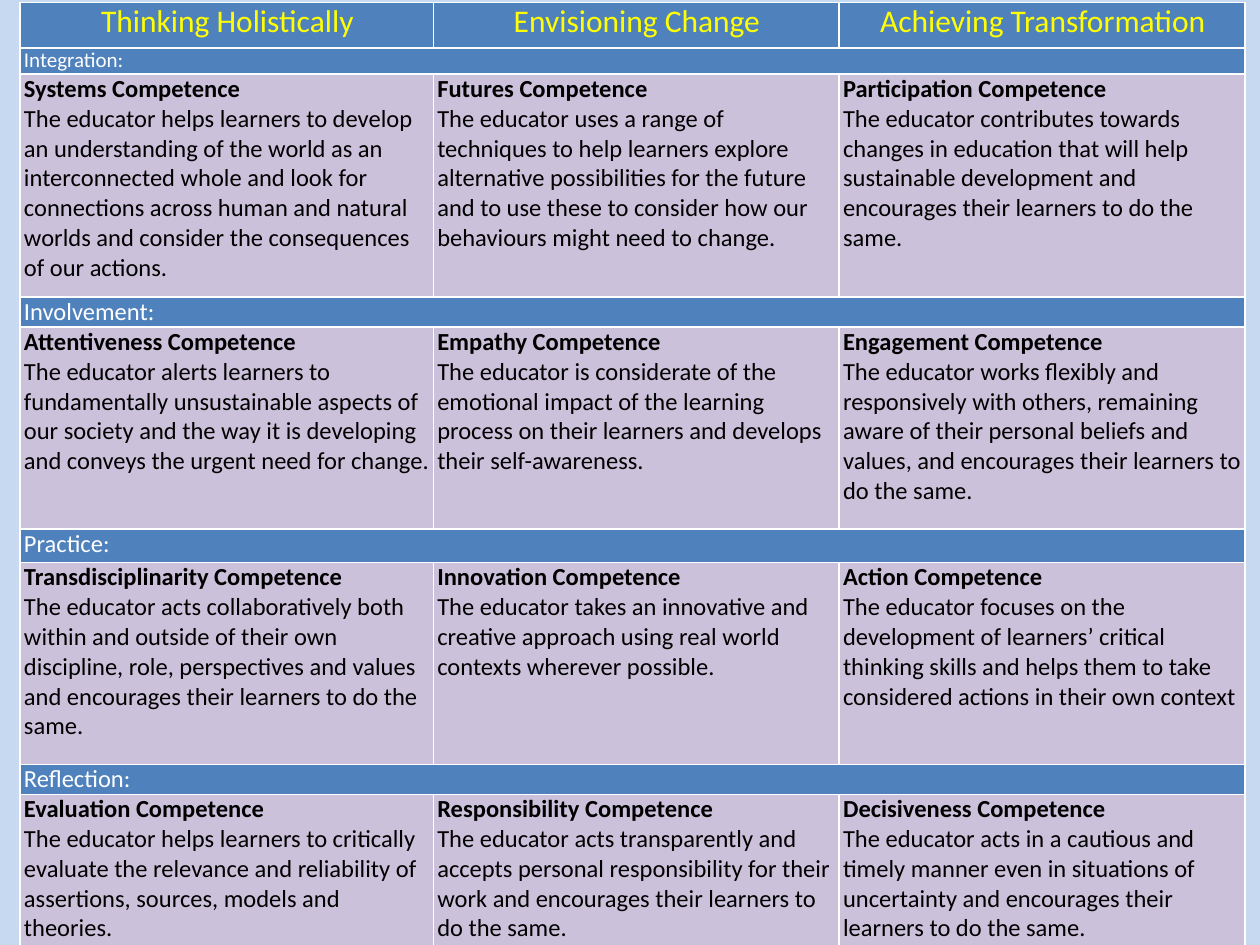
import dataclasses

import lxml.etree
import pptx
import pptx.dml.color
import pptx.enum.text
import pptx.oxml
import pptx.oxml.ns
import pptx.util

Pt = pptx.util.Pt


@dataclasses.dataclass(frozen=True)
class Theme:
    """Colours, font and type sizes of the slide."""

    font: str = "Calibri"
    band: str = "4F81BD"
    body: str = "CCC1DA"
    heading_text: str = "FFFF00"
    band_text: str = "FFFFFF"
    body_text: str = "000000"
    border: str = "FFFFFF"
    background: tuple = ((0, "FFFFFF"), (50, "E6E0EC"), (100, "C6D9F1"))
    heading_size: float = 18
    small_size: float = 12
    body_size: float = 14


THEME = Theme()
BOX = (11.5, 1.4, 700, 547.5)
COLUMN_SHARES = (3.28, 3.22, 3.22)
HEADING_HEIGHT = 26
HEADINGS = ("Thinking Holistically", "Envisioning Change", "Achieving Transformation")

SECTIONS = (
    ("Integration:", THEME.small_size, 15, 127.5, (
        ("Systems Competence", "The educator helps learners to develop an understanding of the world as an "
         "interconnected whole and look for connections across human and natural worlds and consider the "
         "consequences of our actions."),
        ("Futures Competence", "The educator uses a range of techniques to help learners explore alternative "
         "possibilities for the future and to use these to consider how our behaviours might need to change."),
        ("Participation Competence", "The educator contributes towards changes in education that will help "
         "sustainable development and encourages their learners to do the same."),
    )),
    ("Involvement:", THEME.body_size, 17, 115.5, (
        ("Attentiveness Competence", "The educator alerts learners to fundamentally unsustainable aspects of "
         "our society and the way it is developing and conveys the urgent need for change."),
        ("Empathy Competence", "The educator is considerate of the emotional impact of the learning process "
         "on their learners and develops their self-awareness."),
        ("Engagement Competence", "The educator works flexibly and responsively with others, remaining aware "
         "of their personal beliefs and values, and encourages their learners to do the same."),
    )),
    ("Practice:", THEME.body_size, 19, 115.5, (
        ("Transdisciplinarity Competence", "The educator acts collaboratively both within and outside of their "
         "own discipline, role, perspectives and values and encourages their learners to do the same."),
        ("Innovation Competence", "The educator takes an innovative and creative approach using real world "
         "contexts wherever possible."),
        ("Action Competence", "The educator focuses on the development of learners’ critical thinking skills "
         "and helps them to take considered actions in their own context"),
    )),
    ("Reflection:", THEME.body_size, 17, 95, (
        ("Evaluation Competence", "The educator helps learners to critically evaluate the relevance and "
         "reliability of assertions, sources, models and theories."),
        ("Responsibility Competence", "The educator acts transparently and accepts personal responsibility "
         "for their work and encourages their learners to do the same."),
        ("Decisiveness Competence", "The educator acts in a cautious and timely manner even in situations of "
         "uncertainty and encourages their learners to do the same."),
    )),
)


def paint_background(slide):
    """Fill the slide with a gradient that spreads from its centre."""
    slide.background.fill.solid()
    properties = slide.background._cSld.bg.bgPr
    stops = "".join(
        f'<a:gs pos="{position * 1000}"><a:srgbClr val="{color}"/></a:gs>'
        for position, color in THEME.background
    )
    gradient = pptx.oxml.parse_xml(
        f'<a:gradFill {pptx.oxml.ns.nsdecls("a")} rotWithShape="1"><a:gsLst>{stops}</a:gsLst>'
        '<a:path path="shape"><a:fillToRect l="50000" t="50000" r="50000" b="50000"/></a:path></a:gradFill>'
    )
    properties.replace(properties[0], gradient)


def style_cell(cell, fill):
    """Give a cell its margins, thin borders and fill."""
    cell.margin_left, cell.margin_right = Pt(2.2), Pt(1.5)
    cell.margin_top = cell.margin_bottom = Pt(0)
    properties = cell._tc.get_or_add_tcPr()
    for side in ("lnL", "lnR", "lnT", "lnB"):
        line = lxml.etree.SubElement(properties, pptx.oxml.ns.qn(f"a:{side}"), w=str(Pt(1)))
        solid = lxml.etree.SubElement(line, pptx.oxml.ns.qn("a:solidFill"))
        lxml.etree.SubElement(solid, pptx.oxml.ns.qn("a:srgbClr"), val=THEME.border)
    cell.fill.solid()
    cell.fill.fore_color.rgb = pptx.dml.color.RGBColor.from_string(fill)


def add_run(paragraph, text, size, color, bold=False):
    """Add one styled run to a paragraph."""
    run = paragraph.add_run()
    run.text = text
    run.font.name = THEME.font
    run.font.size = Pt(size)
    run.font.bold = bold
    run.font.color.rgb = pptx.dml.color.RGBColor.from_string(color)


def fill_headings(table):
    """Write the column headings into the first row."""
    for column, heading in enumerate(HEADINGS):
        cell = table.cell(0, column)
        style_cell(cell, THEME.band)
        paragraph = cell.text_frame.paragraphs[0]
        paragraph.alignment = pptx.enum.text.PP_ALIGN.CENTER
        add_run(paragraph, heading, THEME.heading_size, THEME.heading_text)


def fill_section(table, row, title, title_size, competences):
    """Write a full-width band and the row of competences below it."""
    for column, (name, description) in enumerate(competences):
        style_cell(table.cell(row, column), THEME.band)
        cell = table.cell(row + 1, column)
        style_cell(cell, THEME.body)
        add_run(cell.text_frame.paragraphs[0], name, THEME.body_size, THEME.body_text, bold=True)
        add_run(cell.text_frame.add_paragraph(), description, THEME.body_size, THEME.body_text)
    band = table.cell(row, 0)
    band.merge(table.cell(row, len(competences) - 1))
    add_run(band.text_frame.paragraphs[0], title, title_size, THEME.band_text)


def add_competence_table(slide, box):
    """Place the competence table within the given box."""
    left, top, width, height = box
    heights = [HEADING_HEIGHT]
    for section in SECTIONS:
        heights.extend(section[2:4])
    table = slide.shapes.add_table(
        len(heights), len(HEADINGS), Pt(left), Pt(top), Pt(width), Pt(height)
    ).table
    table.first_row = table.horz_banding = False
    for column, share in zip(table.columns, COLUMN_SHARES):
        column.width = Pt(round(width * share / sum(COLUMN_SHARES), 2))
    for row, row_height in zip(table.rows, heights):
        row.height = Pt(round(height * row_height / sum(heights), 2))
    fill_headings(table)
    for index, (title, title_size, _, _, competences) in enumerate(SECTIONS):
        fill_section(table, 1 + 2 * index, title, title_size, competences)


def main():
    """Build and save the presentation."""
    presentation = pptx.Presentation()
    presentation.slide_width, presentation.slide_height = Pt(720), Pt(540)
    slide = presentation.slides.add_slide(presentation.slide_layouts[6])
    paint_background(slide)
    add_competence_table(slide, BOX)
    presentation.save("out.pptx")


if __name__ == "__main__":
    main()
